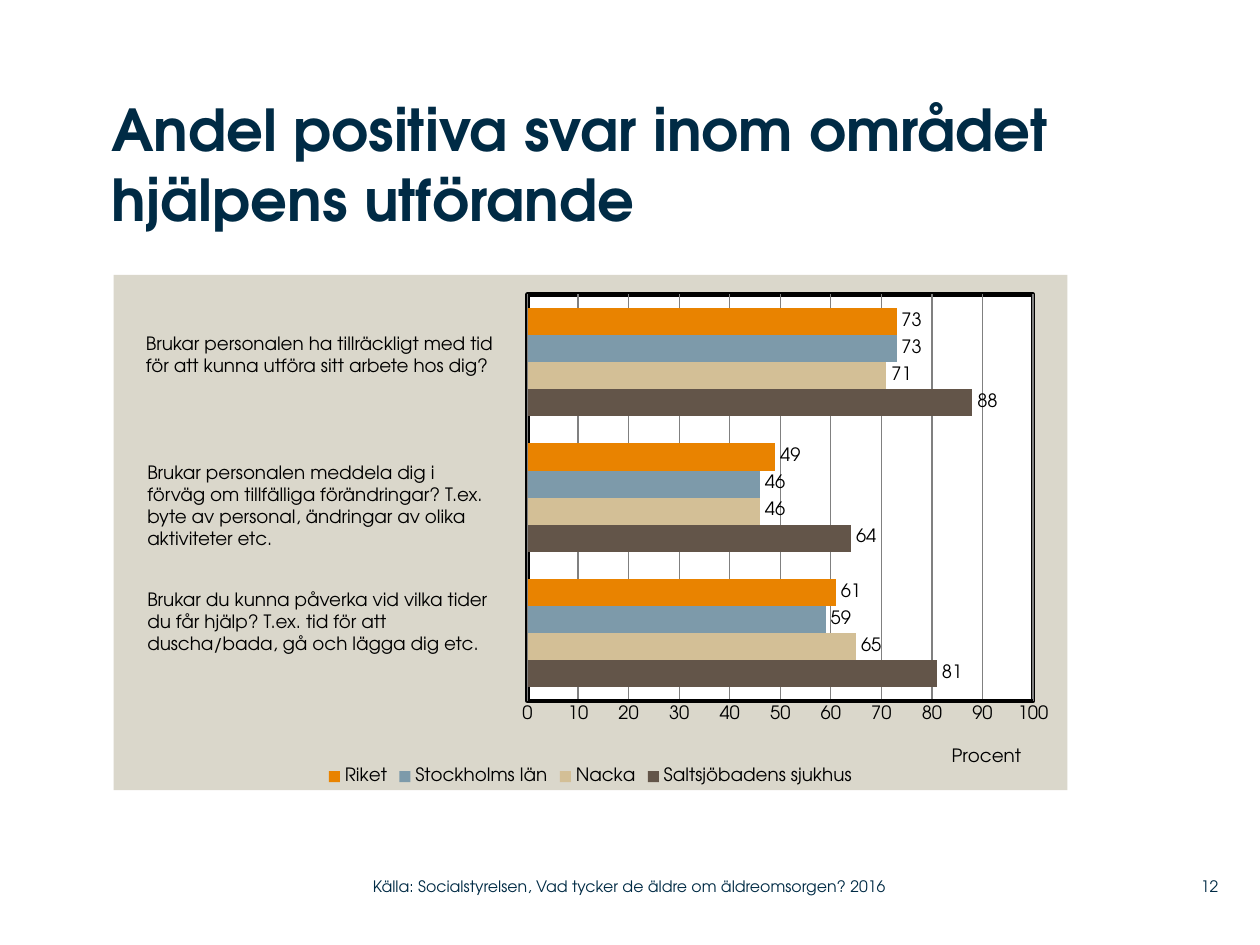
from lxml import etree
from pptx import Presentation
from pptx.chart.data import CategoryChartData
from pptx.dml.color import RGBColor
from pptx.enum.chart import (XL_CHART_TYPE as ChartType, XL_LABEL_POSITION as LabelPos,
                             XL_LEGEND_POSITION as LegendPos, XL_TICK_MARK as Tick)
from pptx.enum.text import MSO_ANCHOR as Anchor, MSO_AUTO_SIZE as AutoSize, PP_ALIGN as Align
from pptx.oxml import parse_xml
from pptx.oxml.ns import nsdecls, qn
from pptx.util import Cm, Pt

# Content
TITLE = "Andel positiva svar inom området hjälpens utförande"
SOURCE = "Källa: Socialstyrelsen, Vad tycker de äldre om äldreomsorgen? 2016"
PAGE = "12"
AXIS_TITLE = "Procent"
CATEGORIES = ["1", "2", "3"]
SERIES = [  # name, values from the bottom group up, colour
    ("Saltsjöbadens sjukhus", (81, 64, 88), "635549"),
    ("Nacka", (65, 46, 71), "D3BF96"),
    ("Stockholms län", (59, 46, 73), "7D9AAA"),
    ("Riket", (61, 49, 73), "E98300"),
]
QUESTIONS = [  # left, top, width, height in cm, paragraphs
    ((2.69, 6.58, 7.6, 1.14), ["Brukar personalen ha tillräckligt med tid",
                               "för att kunna utföra sitt arbete hos dig?"]),
    ((2.72, 9.17, 7.54, 2.06), ["Brukar personalen meddela dig i förväg om tillfälliga "
                                "förändringar? T.ex. byte av personal, ändringar av olika "
                                "aktiviteter etc."]),
    ((2.72, 11.73, 7.54, 1.6), ["Brukar du kunna påverka vid vilka tider",
                                "du får hjälp? T.ex. tid för att",
                                "duscha/bada, gå och lägga dig etc."]),
]

# Theme
THEME = {"font": "TeX Gyre Adventor", "navy": "002B45", "black": "000000",
         "panel": "DAD7CB", "plot": "FFFFFF", "grid": "808080",
         "title": 33, "body": 10.5, "small": 9}


def style_font(font, size="body", color="black", bold=False):
    values = {"name": THEME["font"], "size": Pt(THEME[size]), "bold": bold}
    for name, value in values.items():
        setattr(font, name, value)
    font.color.rgb = RGBColor.from_string(THEME[color])


def fill_text(tf, lines, size="body", color="black", bold=False, align=Align.LEFT, **frame):
    for name, value in {"word_wrap": True, **frame}.items():
        setattr(tf, name, value)
    for i, line in enumerate(lines):
        p = tf.paragraphs[0] if i == 0 else tf.add_paragraph()
        p.alignment = align
        r = p.add_run()
        r.text = line
        style_font(r.font, size, color, bold)


def add_text(slide, box, lines, **fmt):
    sp = slide.shapes.add_textbox(*map(Cm, box))
    fill_text(sp.text_frame, lines, **fmt)


def manual_layout(x, y, w=None, h=None, inner=False):
    """Place a chart part by fractions of the chart's size."""
    layout = etree.Element(qn("c:layout"))
    manual = etree.SubElement(layout, qn("c:manualLayout"))
    items = [("layoutTarget", "inner" if inner else None), ("xMode", "edge"),
             ("yMode", "edge"), ("x", x), ("y", y), ("w", w), ("h", h)]
    for tag, value in items:
        if value is not None:
            etree.SubElement(manual, qn("c:" + tag)).set("val", str(value))
    return layout


def set_layout(parent, index, layout):
    for old in parent.findall(qn("c:layout")):
        parent.remove(old)
    parent.insert(index, layout)


def area_format(fill, line=None, width=0):
    stroke = (f'<a:ln w="{Pt(width)}"><a:solidFill><a:srgbClr val="{line}"/></a:solidFill></a:ln>'
              if line else "<a:ln><a:noFill/></a:ln>")
    return parse_xml(f'<c:spPr {nsdecls("c", "a")}><a:solidFill><a:srgbClr val="{fill}"/>'
                     f'</a:solidFill>{stroke}</c:spPr>')


def add_bar_chart(slide, box):
    data = CategoryChartData()
    data.categories = CATEGORIES
    for name, values, _ in SERIES:
        data.add_series(name, values)
    chart = slide.shapes.add_chart(ChartType.BAR_CLUSTERED, *map(Cm, box), data).chart
    chart.has_title = False
    style_font(chart.font)

    # Bars and value labels
    plot = chart.plots[0]
    plot.gap_width, plot.overlap, plot.vary_by_categories = 100, 0, False
    for series, (_, _, color) in zip(plot.series, SERIES):
        series.format.fill.solid()
        series.format.fill.fore_color.rgb = RGBColor.from_string(color)
        labels = series.data_labels
        labels.show_value, labels.position = True, LabelPos.OUTSIDE_END
        style_font(labels.font)

    # Axes
    chart.category_axis.visible = False
    axis = chart.value_axis
    settings = {"minimum_scale": 0, "maximum_scale": 100, "major_unit": 10,
                "major_tick_mark": Tick.NONE, "minor_tick_mark": Tick.NONE,
                "has_major_gridlines": True}
    for name, value in settings.items():
        setattr(axis, name, value)
    style_font(axis.tick_labels.font)
    for line, color, width in ((axis.format.line, "black", 2),
                               (axis.major_gridlines.format.line, "grid", 0.75)):
        line.color.rgb = RGBColor.from_string(THEME[color])
        line.width = Pt(width)
    fill_text(axis.axis_title.text_frame, [AXIS_TITLE])
    title = axis.axis_title._element
    set_layout(title, 1, manual_layout(0.875, 0.91))

    # Legend
    chart.has_legend = True
    legend = chart.legend
    legend.position, legend.include_in_layout = LegendPos.BOTTOM, False
    style_font(legend.font)

    # Panel and plot area
    space = chart._chartSpace
    area = space.chart.plotArea
    set_layout(area, 0, manual_layout(0.434, 0.038, 0.53, 0.789, inner=True))
    area.append(area_format(THEME["plot"], THEME["black"], 2.5))
    space.find(qn("c:chart")).addnext(area_format(THEME["panel"]))


def main():
    prs = Presentation()
    prs.slide_width, prs.slide_height = Cm(25.4), Cm(19.05)
    slide = prs.slides.add_slide(prs.slide_layouts[5])
    no_inset = dict.fromkeys(("margin_left", "margin_top", "margin_right", "margin_bottom"), 0)

    # Title
    title = slide.shapes.title
    for name, value in zip(("left", "top", "width", "height"), (2.24, 1.9, 19.3, 3.61)):
        setattr(title, name, Cm(value))
    fill_text(title.text_frame, [TITLE], "title", "navy", True, auto_size=AutoSize.NONE,
              vertical_anchor=Anchor.TOP, **no_inset)

    # Chart with its questions
    add_bar_chart(slide, (2.29, 5.54, 19.23, 10.39))
    for box, lines in QUESTIONS:
        add_text(slide, box, lines, auto_size=AutoSize.SHAPE_TO_FIT_TEXT)

    # Footer
    footer = dict(size="small", color="navy", vertical_anchor=Anchor.MIDDLE, **no_inset)
    add_text(slide, (23.37, 17.5, 1.19, 0.74), [PAGE], align=Align.RIGHT, **footer)
    add_text(slide, (7.52, 17.5, 11.25, 0.74), [SOURCE], **footer)

    prs.save("out.pptx")


if __name__ == "__main__":
    main()
